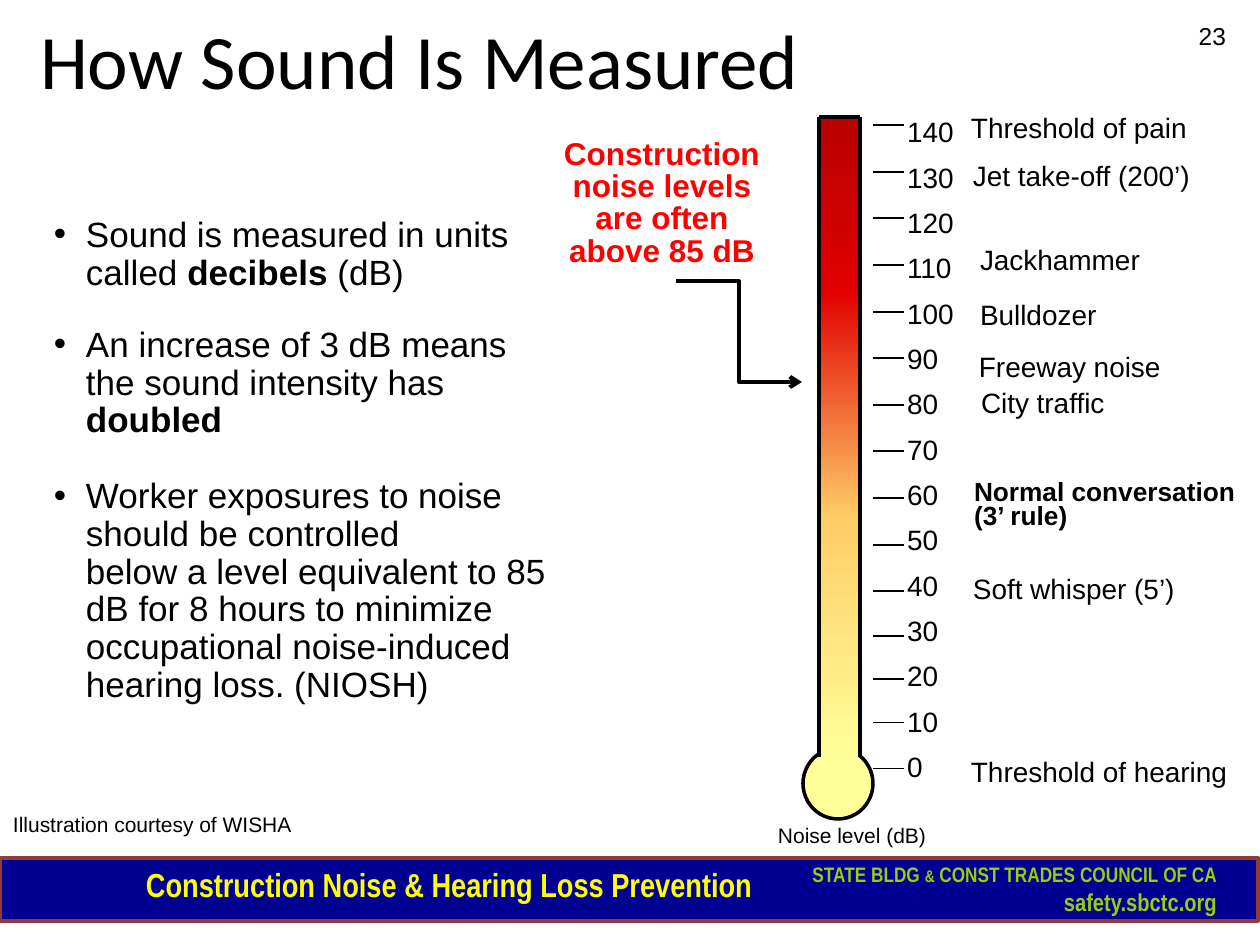
from lxml import etree
from pptx import Presentation
from pptx.dml.color import RGBColor
from pptx.enum.shapes import MSO_CONNECTOR, MSO_SHAPE
from pptx.enum.text import MSO_ANCHOR, PP_ALIGN
from pptx.oxml.ns import qn
from pptx.util import Emu, Pt

STRAIGHT, ELBOW = MSO_CONNECTOR.STRAIGHT, MSO_CONNECTOR.ELBOW
RECTANGLE, OVAL = MSO_SHAPE.RECTANGLE, MSO_SHAPE.OVAL
LEFT, CENTER, RIGHT = PP_ALIGN.LEFT, PP_ALIGN.CENTER, PP_ALIGN.RIGHT
TOP, MIDDLE = MSO_ANCHOR.TOP, MSO_ANCHOR.MIDDLE

BLACK = RGBColor(0x00, 0x00, 0x00)
WHITE = RGBColor(0xFF, 0xFF, 0xFF)
RED = RGBColor(0xFF, 0x00, 0x00)
NAVY = RGBColor(0x00, 0x00, 0x90)
BROWN = RGBColor(0x8E, 0x3B, 0x39)
YELLOW = RGBColor(0xFF, 0xFF, 0x00)
LIME = RGBColor(0x9A, 0xCD, 0x0B)
DARK_RED = RGBColor(0xB8, 0x00, 0x00)
BRIGHT_RED = RGBColor(0xE2, 0x00, 0x00)
ORANGE = RGBColor(0xFF, 0xCC, 0x66)
PALE_YELLOW = RGBColor(0xFF, 0xFF, 0x99)

PX = 914400 / 126
TEXT_INSETS = (13, 6, 13, 6)
NO_INSETS = (0, 0, 0, 0)
TICK_GAPS = [47, 46, 47, 47, 46] * 2 + [45, 43, 44, 46]
LEVELS = [str(level) for level in range(140, -1, -10)]
NARROW = {"name": "Arial Narrow", "bold": True}
BODY = {"line_spacing": 0.9}
LABEL = {"line_spacing": 0.75}

SOUNDS = [
    ("Threshold of pain", 971, 118, 220),
    ("Jet take-off (200’)", 973, 166, 231),
    ("Jackhammer", 980, 250, 231),
    ("Bulldozer", 980, 305, 231),
    ("Freeway noise", 979, 357, 231),
    ("City traffic", 981, 393, 158),
    ("Soft whisper (5’)", 973, 579, 242),
    ("Threshold of hearing", 971, 762, 262),
]


def px(length):
    """Turn pixels into EMU."""
    return Emu(round(length * PX))


def assign(target, values):
    """Set each named attribute of the target."""
    for name, value in values.items():
        setattr(target, name, value)


def set_insets(target, insets):
    """Set the four text margins of a frame or cell."""
    names = ("margin_left", "margin_top", "margin_right", "margin_bottom")
    assign(target, dict(zip(names, map(px, insets))))


def add_span(para, text, size, color=BLACK, small_caps=False, **font):
    """Add one formatted run to a paragraph."""
    span = para.add_run()
    span.text = text
    assign(span.font, {"name": "Arial", "size": Pt(size), "bold": False, **font})
    span.font.color.rgb = color
    if small_caps:
        span.font._element.set("cap", "small")


def set_indent(para, bullet):
    """Indent a paragraph, with a hanging bullet if wanted."""
    properties = para._p.get_or_add_pPr()
    properties.set("marL", str(px(32)))
    properties.set("indent", str(px(-32) if bullet else 0))
    if bullet:
        etree.SubElement(properties, qn("a:buFont")).set("typeface", "Arial")
        etree.SubElement(properties, qn("a:buChar")).set("char", "•")


def add_text(page, area, spans, insets=TEXT_INSETS, anchor=TOP, **layout):
    """Add a text box with one paragraph and return its frame."""
    frame = page.shapes.add_textbox(*map(px, area)).text_frame
    assign(frame, {"word_wrap": True, "vertical_anchor": anchor})
    set_insets(frame, insets)
    fill_para(frame.paragraphs[0], spans, **layout)
    return frame


def fill_para(para, spans, bullet=None, **layout):
    """Fill a paragraph with spans and set its layout."""
    if bullet is not None:
        set_indent(para, bullet)
    assign(para, layout)
    for text, font in spans:
        add_span(para, text, **font)


def add_shape(page, kind, area, colors, line=None, width=2):
    """Add a shape with a solid colour or a downward gradient."""
    shape = page.shapes.add_shape(kind, *map(px, area))
    shape.shadow.inherit = False
    if len(colors) == 1:
        shape.fill.solid()
        shape.fill.fore_color.rgb = colors[0]
    else:
        shape.fill.gradient()
        shape.fill.gradient_angle = 270
        for stop, color in zip(shape.fill.gradient_stops, colors):
            stop.color.rgb = color
    if line is None:
        shape.line.fill.background()
    else:
        shape.line.color.rgb = line
        shape.line.width = Pt(width)


def add_line(page, kind, ends, width=2, arrow=False):
    """Add a black connector, with an arrowhead if wanted."""
    connector = page.shapes.add_connector(kind, *map(px, ends))
    connector.line.color.rgb = BLACK
    connector.line.width = Pt(width)
    etree.SubElement(connector._element.spPr, qn("a:effectLst"))
    if arrow:
        line = connector.line._get_or_add_ln()
        etree.SubElement(line, qn("a:tailEnd")).set("type", "arrow")


def set_borders(cell, ruled):
    """Rule a cell above and below, or leave it without borders."""
    properties = cell._tc.get_or_add_tcPr()
    for side in ("lnL", "lnR", "lnT", "lnB"):
        border = etree.SubElement(properties, qn(f"a:{side}"), w=str(Pt(1)))
        if ruled and side in ("lnT", "lnB"):
            fill = etree.SubElement(border, qn("a:solidFill"))
            etree.SubElement(fill, qn("a:srgbClr")).set("val", str(BLACK))
        else:
            etree.SubElement(border, qn("a:noFill"))


def add_column(page, corner, width, heights, texts, font, insets, anchor, ruled=False):
    """Add a one-column table of texts, with rules between rows if wanted."""
    area = map(px, (*corner, width, sum(heights)))
    table = page.shapes.add_table(len(heights), 1, *area).table
    assign(table, {"first_row": False, "horz_banding": False})
    for row, height, text in zip(table.rows, heights, texts):
        row.height = px(height)
        cell = row.cells[0]
        set_borders(cell, ruled)
        cell.fill.background()
        cell.vertical_anchor = anchor
        set_insets(cell, insets)
        fill_para(cell.text_frame.paragraphs[0], [(text, font)],
                  space_after=Pt(font["size"] / 4), **BODY)


def add_footer(page):
    """Add the footer band and its texts."""
    add_shape(page, RECTANGLE, (0, 858, 1258, 63), [NAVY], BROWN)
    add_text(page, (133, 858, 1110, 53), [
        ("Construction Noise & Hearing Loss Prevention", {"size": 19, "color": YELLOW, **NARROW})])
    lime = {"color": LIME, **NARROW}
    caps = {"small_caps": True, **lime}
    frame = add_text(page, (778, 850, 452, 74), [
        ("state bldg ", {"size": 15, **caps}),
        ("&", {"size": 12, **caps}),
        (" const trades council of ca", {"size": 15, **caps})], alignment=RIGHT)
    fill_para(frame.add_paragraph(), [("safety.sbctc.org", {"size": 14, **lime})], alignment=RIGHT)


def add_title(page):
    """Place and fill the title."""
    title = page.shapes.title
    assign(title, dict(zip(("left", "top", "width", "height"), map(px, (10, 0, 1134, 117)))))
    title.text_frame.vertical_anchor = MIDDLE
    set_insets(title.text_frame, (30, 6, 13, 6))
    fill_para(title.text_frame.paragraphs[0],
              [("How Sound Is Measured", {"size": 44, "name": "Calibri"})], alignment=LEFT)


def add_points(page):
    """Add the bulleted statements."""
    plain, strong = {"size": 20}, {"size": 20, "bold": True}
    add_text(page, (41, 211, 557, 95), [
        ("Sound is measured in units called ", plain), ("decibels ", strong), ("(dB)", plain)],
        bullet=True, **BODY)
    frame = add_text(page, (41, 321, 519, 462), [
        ("An increase of 3 dB means the sound intensity has ", plain), ("doubled", strong)],
        bullet=True, **BODY)
    fill_para(frame.add_paragraph(),
              [("Worker exposures to noise should be controlled", plain)],
              bullet=True, space_before=Pt(21.6), **BODY)
    fill_para(frame.add_paragraph(), [
        ("below a level equivalent to 85 dB for 8 hours to minimize "
         "occupational noise-induced hearing loss. (NIOSH)", plain)], bullet=False, **BODY)


def add_thermometer(page):
    """Add the thermometer, its scale and the sound labels."""
    add_shape(page, OVAL, (803, 748, 70, 71), [PALE_YELLOW], BLACK)
    add_shape(page, RECTANGLE, (820, 117, 38, 183), [DARK_RED, BRIGHT_RED])
    add_shape(page, RECTANGLE, (820, 291, 39, 226), [BRIGHT_RED, ORANGE])
    add_shape(page, RECTANGLE, (820, 514, 38, 251), [ORANGE, PALE_YELLOW])
    for ends in ((860, 117, 819, 117), (860, 117, 860, 757), (819, 117, 819, 757)):
        add_line(page, STRAIGHT, ends)
    dash = {"size": 10, "name": "DejaVu Sans", "color": WHITE}
    add_column(page, (873, 125), 29, TICK_GAPS, ["-"] * len(TICK_GAPS), dash,
               TEXT_INSETS, TOP, ruled=True)
    add_column(page, (907, 112), 53, [45, 46, 45] * 5, LEVELS, {"size": 16}, NO_INSETS, MIDDLE)
    for text, left, top, width in SOUNDS:
        add_text(page, (left, top, width, 32), [(text, {"size": 16})], NO_INSETS, **LABEL)
    add_text(page, (974, 483, 296, 32),
             [("Normal conversation (3’ rule)", {"size": 15, "bold": True})], NO_INSETS, **LABEL)
    add_text(page, (778, 828, 297, 32), [("Noise level (dB)", {"size": 12})], NO_INSETS, **LABEL)


def main():
    """Build and save the slide."""
    deck = Presentation()
    assign(deck, {"slide_width": px(1260), "slide_height": px(945)})
    page = deck.slides.add_slide(deck.slide_layouts[5])
    add_footer(page)
    add_title(page)
    add_points(page)
    add_thermometer(page)
    add_text(page, (555, 140, 214, 136), [
        ("Construction noise levels are often above 85 dB", {"size": 18, "color": RED, "bold": True})],
        NO_INSETS, alignment=CENTER, line_spacing=0.85)
    add_line(page, ELBOW, (676, 281, 802, 382), 2.25, arrow=True)
    add_text(page, (0, 806, 473, 42), [("Illustration courtesy of WISHA", {"size": 12})])
    add_text(page, (945, 11, 294, 50), [("23", {"size": 14})], anchor=MIDDLE, alignment=RIGHT)
    deck.save("out.pptx")


if __name__ == "__main__":
    main()
